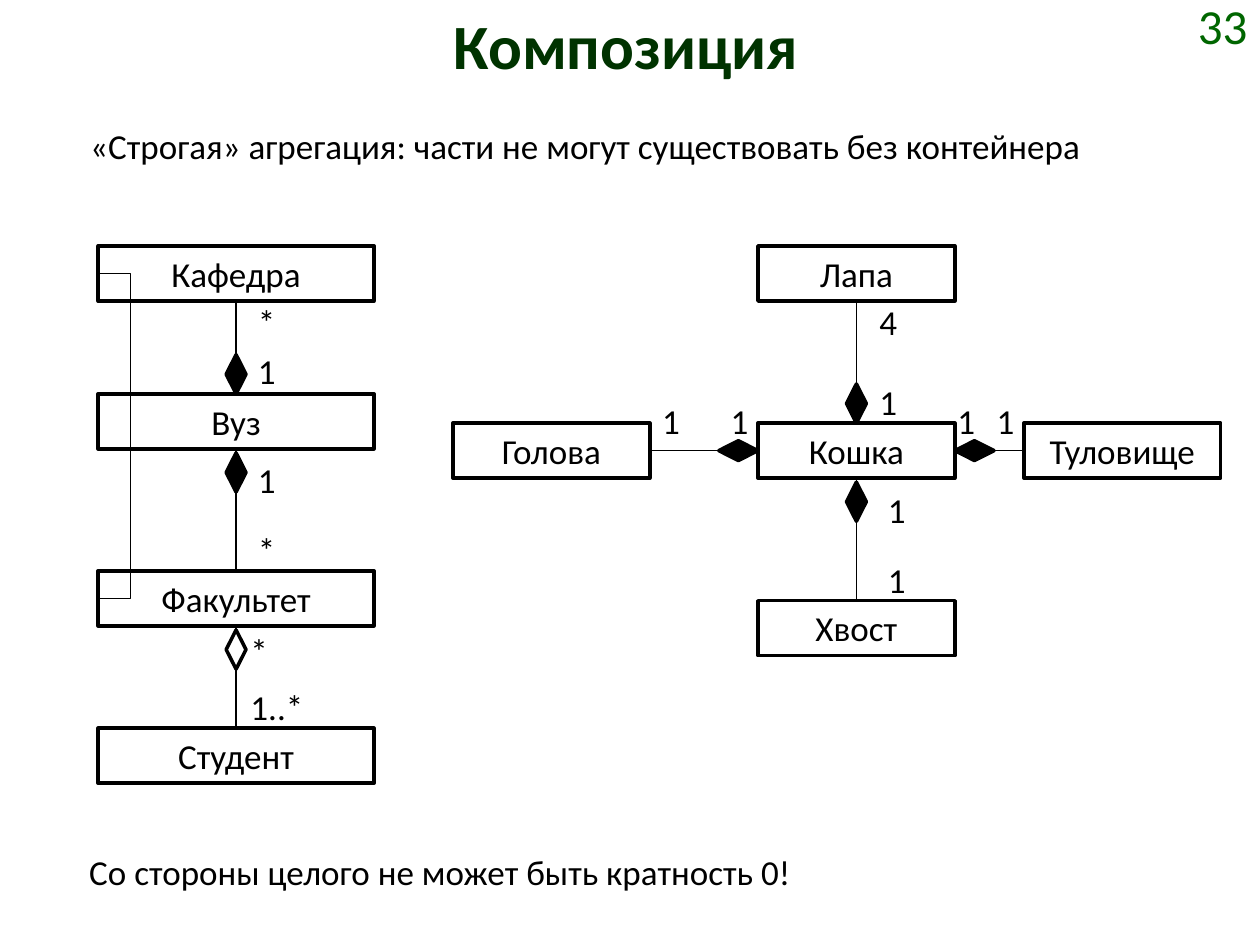
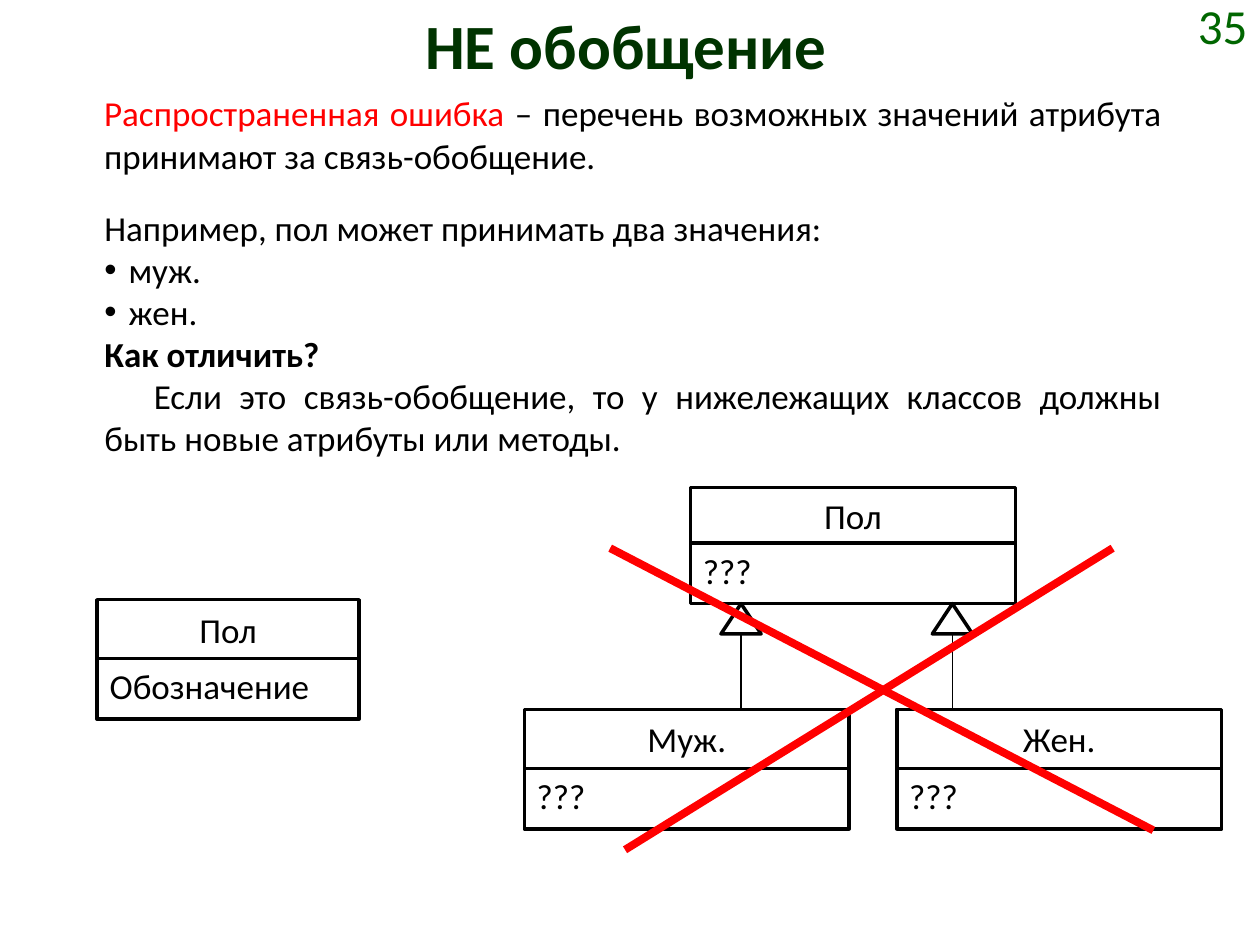
"""Builds two slides about composition and generalisation in class diagrams."""
from dataclasses import dataclass

from lxml import etree
from pptx import Presentation
from pptx.dml.color import RGBColor
from pptx.enum.shapes import MSO_CONNECTOR, MSO_SHAPE
from pptx.enum.text import MSO_ANCHOR, MSO_AUTO_SIZE, PP_ALIGN
from pptx.oxml.ns import qn
from pptx.util import Cm, Pt

STRAIGHT, ELBOW = MSO_CONNECTOR.STRAIGHT, MSO_CONNECTOR.ELBOW
RECTANGLE, TRIANGLE = MSO_SHAPE.RECTANGLE, MSO_SHAPE.ISOSCELES_TRIANGLE
DIAMOND = MSO_SHAPE.FLOWCHART_DECISION
TOP_ANCHOR, MIDDLE = MSO_ANCHOR.TOP, MSO_ANCHOR.MIDDLE
LEFT_ALIGN, CENTER = PP_ALIGN.LEFT, PP_ALIGN.CENTER
RIGHT_ALIGN, JUSTIFY = PP_ALIGN.RIGHT, PP_ALIGN.JUSTIFY
NO_AUTOFIT = MSO_AUTO_SIZE.NONE
TOP, LEFT, BOTTOM, RIGHT = range(4)


@dataclass(frozen=True)
class Theme:
    """Colours, type sizes and line widths shared by the slides."""

    font: str = "Calibri"
    title_color: RGBColor = RGBColor(0x00, 0x33, 0x00)
    number_color: RGBColor = RGBColor(0x00, 0x66, 0x00)
    ink: RGBColor = RGBColor(0x00, 0x00, 0x00)
    paper: RGBColor = RGBColor(0xFF, 0xFF, 0xFF)
    alert: RGBColor = RGBColor(0xFF, 0x00, 0x00)
    title_size: Pt = Pt(36)
    number_size: Pt = Pt(28)
    text_size: Pt = Pt(20)
    outline: Pt = Pt(2)
    link: Pt = Pt(0.75)
    cross: Pt = Pt(4.5)


THEME = Theme()
BOX_HEIGHT = 1.11
DIAMOND_LONG, DIAMOND_SHORT = 0.79, 0.4
GAP_BELOW = 0.08


def write(paragraph, text, *, size=THEME.text_size, color=THEME.ink,
          bold=False, align=LEFT_ALIGN):
    """Add a formatted run to a paragraph."""
    paragraph.alignment = align
    paragraph.space_before = Pt(0)
    run = paragraph.add_run()
    run.text = text
    run.font.name = THEME.font
    run.font.size = size
    run.font.bold = bold
    run.font.color.rgb = color


def place(shape, x, y, width, height):
    """Set the position and size of a shape in centimetres."""
    shape.left, shape.top = Cm(x), Cm(y)
    shape.width, shape.height = Cm(width), Cm(height)


def add_text(slide, x, y, width, height=BOX_HEIGHT, anchor=TOP_ANCHOR):
    """Add an empty text box and return its first paragraph."""
    frame = slide.shapes.add_textbox(Cm(x), Cm(y), Cm(width), Cm(height)).text_frame
    frame.word_wrap = True
    frame.vertical_anchor = anchor
    return frame.paragraphs[0]


def add_slide(deck, layout_index, title, number):
    """Add a slide with its title and page number."""
    slide = deck.slides.add_slide(deck.slide_layouts[layout_index])
    place(slide.shapes.title, 1.19, 0, 22.86, 2.38)
    frame = slide.shapes.title.text_frame
    frame.vertical_anchor = TOP_ANCHOR
    frame.auto_size = NO_AUTOFIT
    write(frame.paragraphs[0], title, size=THEME.title_size,
          color=THEME.title_color, bold=True, align=CENTER)
    write(add_text(slide, 22.8, 0, 2.6, 1, MIDDLE), number,
          size=THEME.number_size, color=THEME.number_color, align=RIGHT_ALIGN)
    return slide


def add_outlined(slide, kind, x, y, width, height, fill=THEME.paper):
    """Add a black-outlined preset shape."""
    shape = slide.shapes.add_shape(kind, Cm(x), Cm(y), Cm(width), Cm(height))
    shape.shadow.inherit = False
    shape.fill.solid()
    shape.fill.fore_color.rgb = fill
    shape.line.color.rgb = THEME.ink
    shape.line.width = THEME.outline
    return shape


def add_box(slide, text, x, y, width, height=BOX_HEIGHT, align=CENTER,
            anchor=TOP_ANCHOR):
    """Add a rectangle with one line of text."""
    box = add_outlined(slide, RECTANGLE, x, y, width, height)
    box.text_frame.word_wrap = True
    box.text_frame.vertical_anchor = anchor
    write(box.text_frame.paragraphs[0], text, align=align)
    return box


def add_line(slide, start=(0, 0), end=(0, 0), kind=STRAIGHT,
             color=THEME.ink, width=THEME.link):
    """Add a connector without a shadow between two points."""
    line = slide.shapes.add_connector(kind, *map(Cm, start + end))
    line.line.color.rgb = color
    line.line.width = width
    etree.SubElement(line._element.spPr, qn("a:effectLst"))
    return line


def add_aggregation(slide, whole, side, part, fill=THEME.ink):
    """Join a part to a side of its whole, with a diamond at the whole."""
    line = add_line(slide)
    line.begin_connect(part, (side + 2) % 4)
    line.end_connect(whole, side)
    x, y = line.end_x / Cm(1), line.end_y / Cm(1)
    if side in (TOP, BOTTOM):
        width, height = DIAMOND_SHORT, DIAMOND_LONG
        x -= width / 2
        y += GAP_BELOW if side == BOTTOM else -height
    else:
        width, height = DIAMOND_LONG, DIAMOND_SHORT
        x -= width if side == LEFT else 0
        y -= height / 2
    add_outlined(slide, DIAMOND, x, y, width, height, fill)


def add_side_loop(slide, upper, lower, reach=0.64):
    """Join the left sides of two boxes by a bracket-shaped connector."""
    loop = add_line(slide, kind=ELBOW)
    loop.begin_connect(upper, LEFT)
    loop.end_connect(lower, LEFT)
    loop.width = Cm(0.01)
    bend = round(-reach / 0.01 * 100000)
    guides = loop._element.spPr.find(qn("a:prstGeom")).get_or_add_avLst()
    etree.SubElement(guides, qn("a:gd"), name="adj1", fmla=f"val {bend}")


def add_class(slide, name, attribute, x, y, width, name_height=1.19):
    """Add a class as a name box above an attribute box."""
    add_box(slide, name, x, y, width, name_height, anchor=MIDDLE)
    add_box(slide, attribute, x, y + name_height, width, 1.22, LEFT_ALIGN)


def add_generalisation(slide, x, child_top, parent_bottom):
    """Add a line with a hollow triangle leading up to the parent class."""
    width, height = 0.81, 0.61
    add_line(slide, (x, child_top), (x, parent_bottom + height))
    add_outlined(slide, TRIANGLE, x - width / 2, parent_bottom, width, height)


def add_item(frame, text, margin=0.0, indent=0.0, bullet=None, bold=False):
    """Append a justified paragraph with its own indents and bullet."""
    first = frame.paragraphs[0]
    paragraph = frame.add_paragraph() if first.runs else first
    write(paragraph, text, bold=bold, align=JUSTIFY)
    properties = paragraph._p.get_or_add_pPr()
    properties.set("marL", str(Cm(margin)))
    properties.set("indent", str(Cm(indent)))
    if bullet:
        etree.SubElement(properties, qn("a:buFont"), typeface="Arial")
        etree.SubElement(properties, qn("a:buChar"), char=bullet)
    else:
        etree.SubElement(properties, qn("a:buNone"))


def build_composition(deck):
    """Build the slide on composition."""
    slide = add_slide(deck, 5, "Композиция", "33")
    write(add_text(slide, 1.57, 2.39, 22.02),
          "«Строгая» агрегация: части не могут существовать без контейнера",
          align=JUSTIFY)
    write(add_text(slide, 1.55, 17.02, 22.02),
          "Со стороны целого не может быть кратность 0!", align=JUSTIFY)

    department, university, faculty, student = (
        add_box(slide, name, 1.98, y, 5.56)
        for name, y in (("Кафедра", 4.96), ("Вуз", 7.94),
                        ("Факультет", 11.51), ("Студент", 14.68)))
    add_aggregation(slide, university, TOP, department)
    add_aggregation(slide, university, BOTTOM, faculty)
    add_aggregation(slide, faculty, BOTTOM, student, THEME.paper)
    add_side_loop(slide, department, faculty)

    cat, paw, head, tail, torso = (
        add_box(slide, name, x, y, 3.97)
        for name, x, y in (("Кошка", 15.28, 8.53), ("Лапа", 15.28, 4.96),
                           ("Голова", 9.13, 8.53), ("Хвост", 15.28, 12.11),
                           ("Туловище", 20.64, 8.53)))
    for side, part in ((TOP, paw), (LEFT, head), (BOTTOM, tail), (RIGHT, torso)):
        add_aggregation(slide, cat, side, part)

    multiplicities = (
        ("*", 4.95, 5.94), ("1", 4.95, 6.93), ("1", 4.95, 9.12),
        ("*", 4.95, 10.52), ("*", 4.8, 12.57), ("1..*", 4.8, 13.69),
        ("4", 17.48, 5.94), ("1", 17.48, 7.54), ("1", 17.65, 9.72),
        ("1", 17.65, 11.13), ("1", 13.1, 7.92), ("1", 14.48, 7.92),
        ("1", 19.05, 7.92), ("1", 19.84, 7.92))
    for multiplicity, x, y in multiplicities:
        width = 0.87 if len(multiplicity) == 1 else 1.93
        write(add_text(slide, x, y, width), multiplicity, align=JUSTIFY)


def build_not_generalisation(deck):
    """Build the slide on what is not generalisation."""
    slide = add_slide(deck, 1, "НЕ обобщение", "35")
    mistake = add_text(slide, 1.85, 1.73, 21.82, 1.96)
    write(mistake, "Распространенная ошибка", color=THEME.alert, align=JUSTIFY)
    write(mistake, " – перечень возможных значений атрибута принимают "
                   "за связь-обобщение.", align=JUSTIFY)

    body = slide.placeholders[1]
    place(body, 1.85, 4.04, 21.82, 5.38)
    frame = body.text_frame
    frame.auto_size = NO_AUTOFIT
    add_item(frame, "Например, пол может принимать два значения:")
    for value in ("муж.", "жен."):
        add_item(frame, value, 0.49, -0.49, "•")
    add_item(frame, "Как отличить?", 0.49, -0.49, bold=True)
    add_item(frame, "Если это связь-обобщение, то у нижележащих классов "
                    "должны быть новые атрибуты или методы.", indent=1)

    child_top, parent_bottom = 14.3, 12.17
    add_class(slide, "Пол", "Обозначение", 1.96, 12.09, 5.28)
    add_class(slide, "Пол", "???", 13.92, 9.83, 6.55, name_height=1.12)
    for name, x, link_x in (("Муж.", 10.57, 14.94), ("Жен.", 18.08, 19.2)):
        add_class(slide, name, "???", x, child_top, 6.55)
        add_generalisation(slide, link_x, child_top, parent_bottom)
    for start, end in (((12.3, 11.05), (23.25, 16.74)),
                       ((12.6, 17.13), (22.43, 11.05))):
        add_line(slide, start, end, color=THEME.alert, width=THEME.cross)


def main():
    """Build and save the deck."""
    deck = Presentation()
    deck.slide_width, deck.slide_height = Cm(25.4), Cm(19.05)
    build_composition(deck)
    build_not_generalisation(deck)
    deck.save("out.pptx")


if __name__ == "__main__":
    main()
